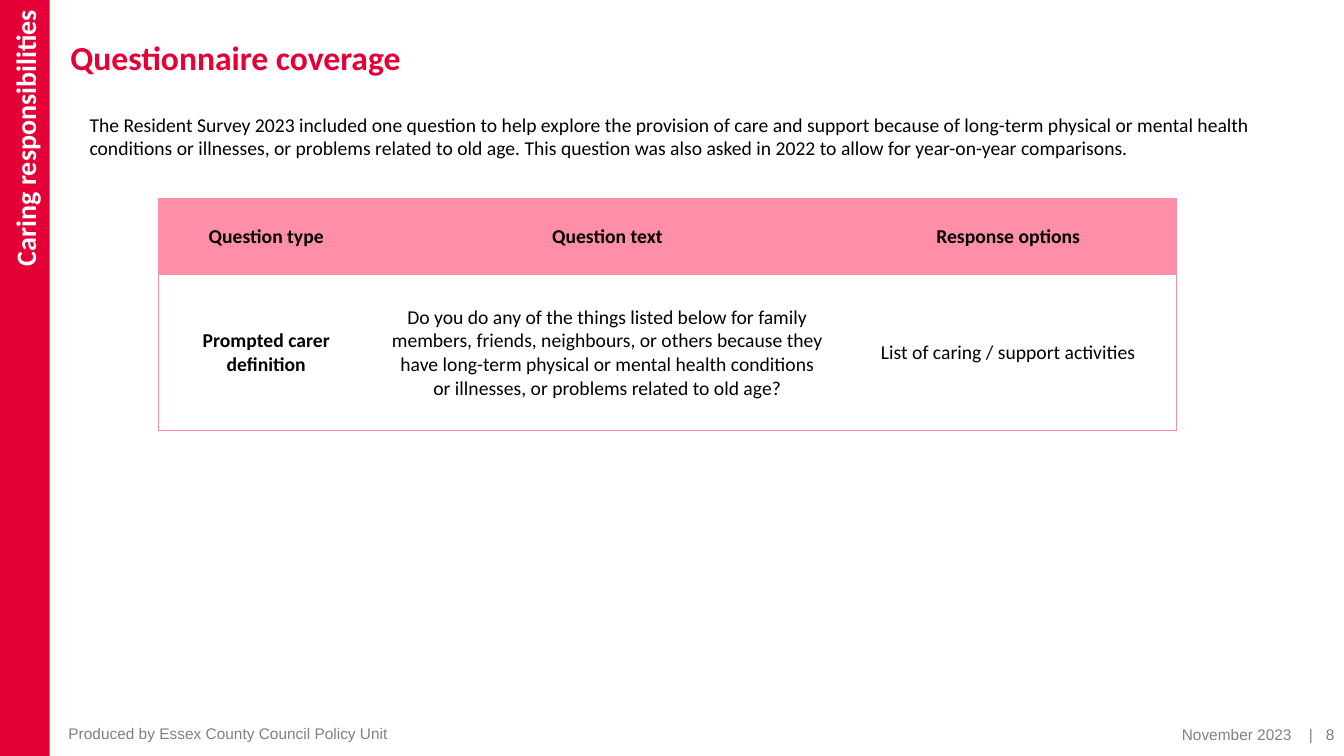
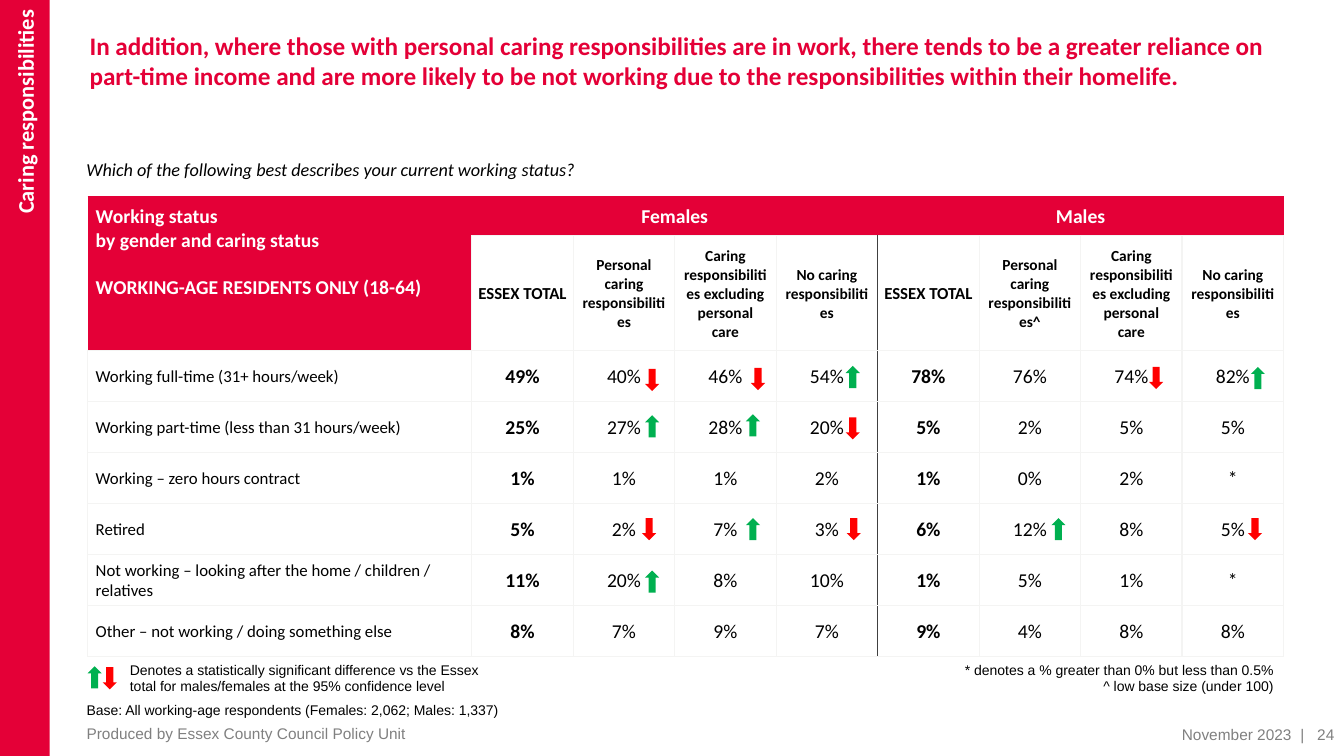
"""Build two survey slides on caring responsibilities."""
from dataclasses import dataclass
from typing import NamedTuple

from lxml.etree import SubElement
from pptx import Presentation
from pptx.dml.color import RGBColor as Rgb
from pptx.enum.shapes import MSO_SHAPE as Kind
from pptx.enum.text import MSO_ANCHOR as Anchor, PP_ALIGN as Align
from pptx.oxml.ns import qn
from pptx.util import Pt


@dataclass(frozen=True)
class Theme:
    red: str = "E40037"
    pink: str = "FF8EA9"
    pale: str = "F4F4F3"
    split: str = "404040"
    grey: str = "808080"
    black: str = "000000"
    white: str = "FFFFFF"
    green: str = "00B050"
    down: str = "FF0000"
    main: str = "Calibri"
    small: str = "Arial"
    body: float = 14
    quiz: float = 13
    label: float = 12
    head: float = 11
    foot: float = 11
    note: float = 10


T = Theme()
BARE = "{2D5ABB26-0587-4C30-8999-92F81FD0307C}"


class Box(NamedTuple):
    left: float
    top: float
    width: float
    height: float


class Pad(NamedTuple):
    left: float
    top: float
    right: float
    low: float


class Mark(NamedTuple):
    left: float
    top: float
    up: bool


class Edge(NamedTuple):
    side: str
    color: str
    width: float


@dataclass(frozen=True)
class Style:
    size: float = T.body
    color: str = T.black
    bold: bool = False
    slant: bool = False
    font: str = T.main
    align: Align = Align.LEFT
    anchor: Anchor = Anchor.TOP
    pad: Pad = Pad(7.2, 3.6, 7.2, 3.6)
    before: float = 0


@dataclass(frozen=True)
class Page:
    number: str
    title: str
    place: Box
    size: float
    band: float
    foot: float


MID, RIGHT, CORE = Align.CENTER, Align.RIGHT, Anchor.MIDDLE
TIGHT, SLIM = Pad(2.9, 0.7, 2.9, 0), Pad(5.8, 0.7, 5.8, 0)
THIN = Pad(0.7, 0.7, 0.7, 0)
FOOT = Style(T.foot, T.grey, font=T.small, anchor=CORE)
DATE = Style(T.foot, T.grey, font=T.small, anchor=CORE, align=RIGHT)
NOTE = Style(T.note, font=T.small)

PAGES = (
    Page("8", "Questionnaire coverage", Box(43.2, 23, 583.2, 83.5), 24, 20, 41.8),
    Page("24", "In addition, where those with personal caring responsibilities are in work, "
         "there tends to be a greater reliance on part-time income and are more likely to be "
         "not working due to the responsibilities within their homelife.",
         Box(56.9, 18, 879.1, 83.5), 18, 16, 54.7),
)
ASKED = (
    ("Question type", "Question text", "Response options"),
    ("Prompted carer definition",
     "Do you do any of the things listed below for family members, friends, neighbours, or "
     "others because they have long-term physical or mental health conditions or illnesses, "
     "or problems related to old age?",
     "List of caring / support activities"),
)
CARE = "Personal caring responsibilities"
OTHER = "Caring responsibilities excluding personal care"
NONE = "No caring responsibilities"
HEADS = ("ESSEX TOTAL", CARE, OTHER, NONE, "ESSEX TOTAL", CARE + "^", OTHER, NONE)
WORK = (
    ("Working full-time (31+ hours/week)", "49% 40% 46% 54% 78% 76% 74% 82%"),
    ("Working part-time (less than 31 hours/week)", "25% 27% 28% 20% 5% 2% 5% 5%"),
    ("Working – zero hours contract", "1% 1% 1% 2% 1% 0% 2% *"),
    ("Retired", "5% 2% 7% 3% 6% 12% 8% 5%"),
    ("Not working – looking after the home / children / relatives",
     "11% 20% 8% 10% 1% 5% 1% *"),
    ("Other – not working / doing something else", "8% 7% 9% 7% 9% 4% 8% 8%"),
)
MARKS = (
    Mark(62.6, 475.9, True), Mark(73.4, 476.6, False),
    Mark(460.8, 263.5, False), Mark(536.4, 262.8, False), Mark(604.1, 261.4, True),
    Mark(820.8, 262.1, False), Mark(893.5, 262.1, True),
    Mark(460.8, 296.6, True), Mark(532.8, 295.9, True), Mark(604.1, 298.1, False),
    Mark(458.6, 370.1, False), Mark(532.8, 370.1, True), Mark(604.8, 370.1, False),
    Mark(751, 370.1, True), Mark(891.4, 370.1, False),
    Mark(460.8, 407.5, True),
)


def pour(frame, lines: tuple[str, ...], style: Style) -> None:
    for i, line in enumerate(lines):
        para = frame.paragraphs[0] if i == 0 else frame.add_paragraph()
        para.alignment = style.align
        para.space_before = Pt(style.before)
        ink(para, line, style)


def ink(para, text: str, style: Style):
    run = para.add_run()
    run.text = text
    font = run.font
    font.name, font.size = style.font, Pt(style.size)
    font.bold, font.italic = style.bold, style.slant
    font.color.rgb = Rgb.from_string(style.color)
    return run


def fit(frame, style: Style) -> None:
    frame.word_wrap = True
    frame.vertical_anchor = style.anchor
    frame.margin_left, frame.margin_top = Pt(style.pad.left), Pt(style.pad.top)
    frame.margin_right, frame.margin_bottom = Pt(style.pad.right), Pt(style.pad.low)


def write(slide, box: Box, style: Style, *lines: str):
    frame = slide.shapes.add_textbox(*map(Pt, box)).text_frame
    fit(frame, style)
    pour(frame, lines, style)
    return frame


def solid(slide, kind: Kind, box: Box, color: str):
    shape = slide.shapes.add_shape(kind, *map(Pt, box))
    shape.shadow.inherit = False
    shape.fill.solid()
    shape.fill.fore_color.rgb = Rgb.from_string(color)
    shape.line.fill.background()
    return shape


def start(deck, page: Page):
    slide = deck.slides.add_slide(deck.slide_layouts[6])
    band = solid(slide, Kind.RECTANGLE, Box(0, 0, 35.5, 540), T.red).text_frame
    style = Style(page.band, T.white, True, align=RIGHT, anchor=CORE,
                  pad=Pad(7.2, 7.2, 7.2, 3.6))
    fit(band, style)
    band._txBody.bodyPr.set("vert", "vert270")
    pour(band, ("Caring responsibilities",), style)
    write(slide, page.place, Style(page.size, T.red, True, pad=Pad(7.2, 3.6, 7.2, 0)),
          page.title)
    write(slide, Box(page.foot, 518.7, 470, 10.8), FOOT,
          "Produced by Essex County Council Policy Unit")
    write(slide, Box(757, 519.4, 172.8, 10.8), DATE, "November 2023")
    para = write(slide, Box(899, 519.1, 61.2, 10.8), DATE).paragraphs[0]
    para.alignment = RIGHT
    ink(para, "| ", DATE)._r.get_or_add_rPr().set("spc", "306")
    ink(para, page.number, DATE)
    return slide


def grid(slide, left: float, top: float, cols: list[float], rows: list[float]):
    box = Box(left, top, sum(cols), sum(rows))
    frame = slide.shapes.add_table(len(rows), len(cols), *map(Pt, box))
    table = frame.table
    table.first_row = table.horz_banding = False
    table._tbl.tblPr.find(qn("a:tableStyleId")).text = BARE
    for col, width in zip(table.columns, cols):
        col.width = Pt(width)
    for row, height in zip(table.rows, rows):
        row.height = Pt(height)
    return table


def trim(cell, edges: list[Edge], fill: str) -> None:
    props = cell._tc.get_or_add_tcPr()
    for edge in sorted(edges, key=lambda e: "LRTB".index(e.side)):
        line = SubElement(props, qn("a:ln" + edge.side), w=str(Pt(edge.width)))
        SubElement(SubElement(line, qn("a:solidFill")), qn("a:srgbClr"), val=edge.color)
    cell.fill.solid()
    cell.fill.fore_color.rgb = Rgb.from_string(fill)


def put(cell, style: Style, *lines: str) -> None:
    cell.vertical_anchor = style.anchor
    cell.margin_left, cell.margin_top = Pt(style.pad.left), Pt(style.pad.top)
    cell.margin_right, cell.margin_bottom = Pt(style.pad.right), Pt(style.pad.low)
    pour(cell.text_frame, lines, style)


def cover(deck, page: Page) -> None:
    slide = start(deck, page)
    write(slide, Box(56.9, 77, 876.2, 64.1), Style(before=6),
          "The Resident Survey 2023 included one question to help explore the provision of "
          "care and support because of long-term physical or mental health conditions or "
          "illnesses, or problems related to old age. This question was also asked in 2022 "
          "to allow for year-on-year comparisons.")
    table = grid(slide, 112.8, 141.4, [154.8, 332.6, 240], [55.4, 110.9])
    for r, row in enumerate(ASKED):
        for c, text in enumerate(row):
            sides = ("B" if r else "T") + {0: "L", 2: "R"}.get(c, "")
            trim(table.cell(r, c), [Edge(s, T.pink, 0.5) for s in sides],
                 T.white if r else T.pink)
            gap = 11.5 if c == 1 else 5.8
            pad = Pad(gap, gap, gap, gap) if r else SLIM
            put(table.cell(r, c), Style(bold=r == 0 or c == 0, align=MID,
                                        anchor=CORE, pad=pad), text)


def status(deck, page: Page) -> None:
    slide = start(deck, page)
    table = grid(slide, 62.6, 140.4, [274.4] + [72.5] * 8, [28.1, 82.1] + [36.45] * 6)
    for r in range(8):
        for c in range(9):
            if r == 0 or (r == 1 and c == 0):
                edges = [Edge("T", T.red, 0.5), Edge("B", T.pale, 1)]
                trim(table.cell(r, c), edges[r:], T.red)
                continue
            cut = {4: "R", 5: "L"}.get(c)
            trim(table.cell(r, c),
                 [Edge(s, T.split if s == cut else T.pale, 1) for s in "LRTB"], T.white)
    for r, c, low, far in ((0, 0, 1, 0), (0, 1, 0, 4), (0, 5, 0, 8)):
        table.cell(r, c).merge(table.cell(low, far))
    key = Style(color=T.white, bold=True, pad=Pad(5.8, 5.8, 5.8, 0))
    corner = table.cell(0, 0)
    put(corner, key, "Working status", "by gender and caring status",
        "WORKING-AGE RESIDENTS ONLY (18-64)")
    corner.text_frame.paragraphs[2].space_before = Pt(17)
    for c, text in ((1, "Females"), (5, "Males")):
        put(table.cell(0, c), Style(color=T.white, bold=True, align=MID,
                                    anchor=CORE, pad=TIGHT), text)
    for c, text in enumerate(HEADS, 1):
        total = c in (1, 5)
        put(table.cell(1, c), Style(T.label if total else T.head, bold=True, align=MID,
                                    anchor=CORE, pad=TIGHT if total else SLIM), text)
    for r, (label, shares) in enumerate(WORK, 2):
        put(table.cell(r, 0), Style(T.label, anchor=CORE, pad=Pad(5.8, 0.7, 2.9, 0)), label)
        for c, share in enumerate(shares.split(), 1):
            put(table.cell(r, c), Style(bold=c in (1, 5), align=MID, anchor=CORE,
                                        pad=THIN), share)
    write(slide, Box(54.7, 109.4, 446.4, 23), Style(T.quiz, slant=True),
          "Which of the following best describes your current working status?")
    write(slide, Box(85.7, 468.7, 265, 31.7), NOTE,
          "Denotes a statistically significant difference vs the Essex total for "
          "males/females at the 95% confidence level")
    write(slide, Box(54.7, 497.5, 575.3, 19.4), NOTE,
          "Base: All working-age respondents (Females: 2,062; Males: 1,337)")
    write(slide, Box(668.2, 468.7, 248.4, 31.7), Style(T.note, font=T.small, align=RIGHT),
          "* denotes a % greater than 0% but less than 0.5%", "^ low base size (under 100)")
    for mark in MARKS:
        solid(slide, Kind.UP_ARROW if mark.up else Kind.DOWN_ARROW,
              Box(mark.left, mark.top, 10.1, 15.8), T.green if mark.up else T.down)


def main() -> None:
    deck = Presentation()
    deck.slide_width, deck.slide_height = Pt(960), Pt(540)
    cover(deck, PAGES[0])
    status(deck, PAGES[1])
    deck.save("out.pptx")


if __name__ == "__main__":
    main()
